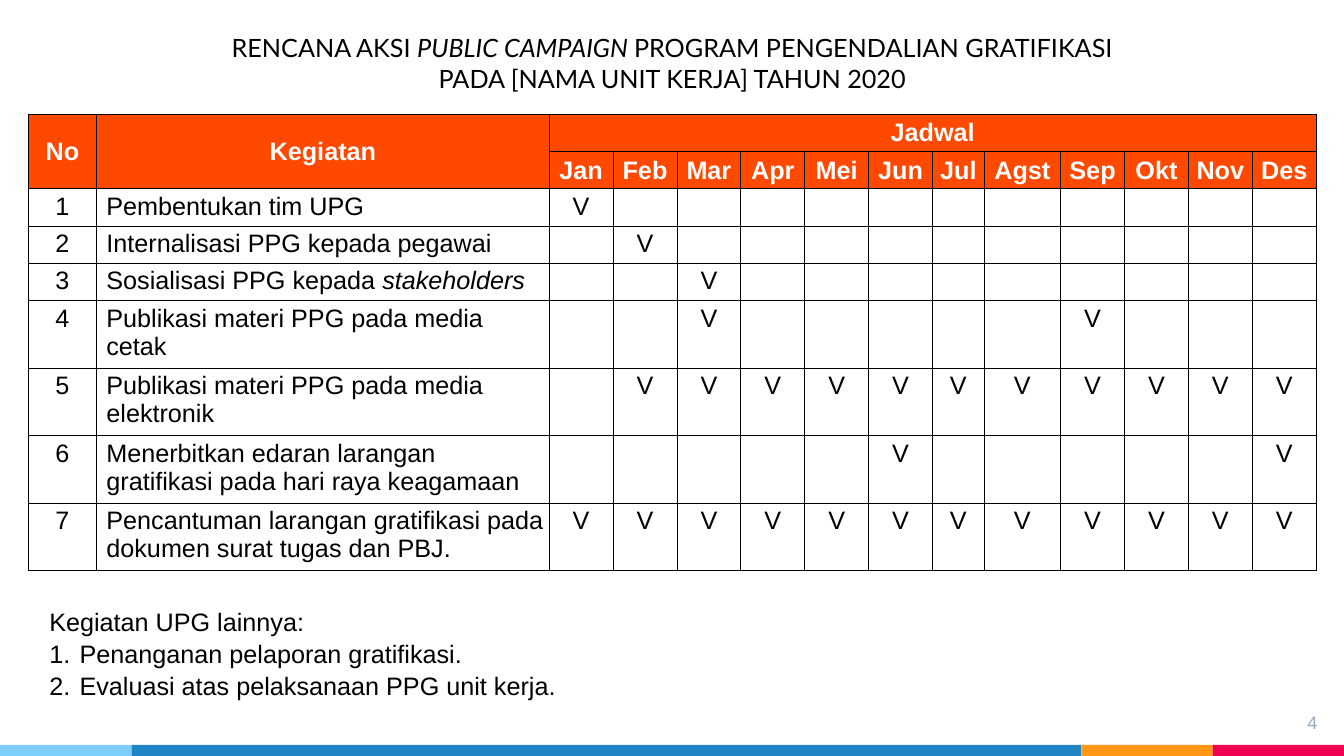
from dataclasses import dataclass

from lxml import etree
from pptx import Presentation
from pptx.dml.color import RGBColor
from pptx.enum.shapes import MSO_SHAPE
from pptx.enum.text import MSO_ANCHOR, MSO_AUTO_SIZE, PP_ALIGN
from pptx.oxml.ns import qn
from pptx.util import Pt

RECTANGLE = MSO_SHAPE.RECTANGLE
LEFT, CENTER, RIGHT = PP_ALIGN.LEFT, PP_ALIGN.CENTER, PP_ALIGN.RIGHT
TOP, MIDDLE = MSO_ANCHOR.TOP, MSO_ANCHOR.MIDDLE
GROW = MSO_AUTO_SIZE.SHAPE_TO_FIT_TEXT

BLACK = RGBColor(0x00, 0x00, 0x00)
WHITE = RGBColor(0xFF, 0xFF, 0xFF)
ORANGE = RGBColor(0xFF, 0x48, 0x00)
GRAY = RGBColor(0x97, 0xAB, 0xBC)
SKY = RGBColor(0x7E, 0xCE, 0xFD)
BLUE = RGBColor(0x21, 0x85, 0xC5)
AMBER = RGBColor(0xFF, 0x97, 0x15)
CRIMSON = RGBColor(0xF2, 0x02, 0x53)

TITLE_FONT = {"name": "Lato", "size": Pt(18)}
BODY_FONT = {"name": "Arial", "size": Pt(18)}
HEADER_FONT = BODY_FONT | {"bold": True}
PAGE_FONT = {"name": "Arial", "size": Pt(13)}
NO_STYLE = "{2D5ABB26-0587-4C30-8999-92F81FD0307C}"
MONTHS = ["Jan", "Feb", "Mar", "Apr", "Mei", "Jun",
          "Jul", "Agst", "Sep", "Okt", "Nov", "Des"]
MONTH_WIDTHS = {"Jul": 36.9, "Agst": 54.6}


@dataclass
class Activity:
    text: str
    months: list[str]
    height: float = 46
    italic_end: str = ""


@dataclass
class Bar:
    left: float
    right: float
    color: RGBColor


ACTIVITIES = [
    Activity("Pembentukan tim UPG", ["Jan"], 25.7),
    Activity("Internalisasi PPG kepada pegawai", ["Feb"], 25.7),
    Activity("Sosialisasi PPG kepada ", ["Mar"], 25.7, "stakeholders"),
    Activity("Publikasi materi PPG pada media cetak", ["Mar", "Sep"]),
    Activity("Publikasi materi PPG pada media elektronik", MONTHS[1:]),
    Activity("Menerbitkan edaran larangan gratifikasi pada hari raya keagamaan",
             ["Jun", "Des"]),
    Activity("Pencantuman larangan gratifikasi pada dokumen surat tugas dan PBJ.",
             MONTHS),
]
BARS = [Bar(0, 94, SKY), Bar(94, 772.4, BLUE),
        Bar(772.4, 866.2, AMBER), Bar(866.2, 960, CRIMSON)]
OTHER_ACTIVITIES = ["Kegiatan UPG lainnya:", "Penanganan pelaporan gratifikasi.",
                    "Evaluasi atas pelaksanaan PPG unit kerja."]


def apply(target: object, values: dict) -> None:
    for name, value in values.items():
        setattr(target, name, value)


def add_text(paragraph, text: str, font: dict, color: RGBColor = BLACK,
             italic: bool = False) -> None:
    run = paragraph.add_run()
    run.text = text
    apply(run.font, font | {"italic": italic})
    run.font.color.rgb = color


def set_borders(cell, widths: dict[str, float]) -> None:
    """Draw the given sides in black and leave the others without a line."""
    properties = cell._tc.get_or_add_tcPr()
    for side in ("lnL", "lnR", "lnT", "lnB"):
        width = widths.get(side, 0)
        line = etree.SubElement(properties, qn(f"a:{side}"), w=str(int(Pt(width))))
        if width:
            fill = etree.SubElement(line, qn("a:solidFill"))
            etree.SubElement(fill, qn("a:srgbClr"), val=str(BLACK))
        else:
            etree.SubElement(line, qn("a:noFill"))


def format_cell(cell, align: PP_ALIGN, anchor: MSO_ANCHOR = TOP) -> None:
    inset = Pt(2.5)
    apply(cell, {"margin_left": inset, "margin_right": inset, "margin_top": inset,
                 "margin_bottom": inset, "vertical_anchor": anchor})
    apply(cell.text_frame.paragraphs[0],
          {"alignment": align, "space_before": Pt(2), "space_after": Pt(2)})


def fill_title(table) -> None:
    cell = table.cell(0, 0)
    cell.merge(table.cell(0, 13))
    apply(cell, {"margin_left": Pt(9.4), "margin_right": Pt(9.4),
                 "margin_top": Pt(5), "margin_bottom": Pt(5)})
    title = cell.text_frame.paragraphs[0]
    title.alignment = CENTER
    add_text(title, "RENCANA AKSI ", TITLE_FONT)
    add_text(title, "PUBLIC CAMPAIGN ", TITLE_FONT, italic=True)
    add_text(title, "PROGRAM PENGENDALIAN GRATIFIKASI", TITLE_FONT)
    title.add_line_break()
    add_text(title, "PADA [NAMA UNIT KERJA] TAHUN 2020", TITLE_FONT)


def fill_header(table) -> None:
    table.cell(1, 0).merge(table.cell(2, 0))
    table.cell(1, 1).merge(table.cell(2, 1))
    table.cell(1, 2).merge(table.cell(1, 13))
    headings = {(1, 0): "No", (1, 1): "Kegiatan", (1, 2): "Jadwal"}
    headings |= {(2, column): month for column, month in enumerate(MONTHS, 2)}
    for (row, column), heading in headings.items():
        cell = table.cell(row, column)
        format_cell(cell, CENTER, MIDDLE)
        add_text(cell.text_frame.paragraphs[0], heading, HEADER_FONT, WHITE)


def fill_activity(table, number: int, activity: Activity) -> None:
    marks = ["V" if month in activity.months else "" for month in MONTHS]
    for column, text in enumerate([str(number), activity.text, *marks]):
        cell = table.cell(number + 2, column)
        format_cell(cell, LEFT if column == 1 else CENTER)
        paragraph = cell.text_frame.paragraphs[0]
        if text:
            add_text(paragraph, text, BODY_FONT)
        else:
            apply(paragraph.font, BODY_FONT)
        if column == 1:
            paragraph._p.get_or_add_pPr().set("marL", str(int(Pt(4.5))))
            if activity.italic_end:
                add_text(paragraph, activity.italic_end, BODY_FONT, italic=True)


def add_plan(slide) -> None:
    heights = [63.2, 26.1, 26.1] + [activity.height for activity in ACTIVITIES]
    widths = [48.8, 323.3] + [MONTH_WIDTHS.get(month, 45.65) for month in MONTHS]
    frame = slide.shapes.add_table(len(heights), len(widths), Pt(20.2), Pt(18.5),
                                   Pt(sum(widths)), Pt(sum(heights)))
    table = frame.table
    apply(table, {"first_row": False, "horz_banding": False})
    table._tbl.tblPr.find(qn("a:tableStyleId")).text = NO_STYLE
    for row, height in zip(table.rows, heights):
        row.height = Pt(height)
    for column, width in zip(table.columns, widths):
        column.width = Pt(width)

    # Borders and fills
    grid = dict.fromkeys(("lnL", "lnR", "lnT", "lnB"), 0.75)
    borders = {0: {"lnB": 1}, 1: grid | {"lnT": 1}}
    for index, row in enumerate(table.rows):
        for cell in row.cells:
            set_borders(cell, borders.get(index, grid))
            if index in (1, 2):
                cell.fill.solid()
                cell.fill.fore_color.rgb = ORANGE
            else:
                cell.fill.background()

    # Contents
    fill_title(table)
    fill_header(table)
    for number, activity in enumerate(ACTIVITIES, 1):
        fill_activity(table, number, activity)


def fill_other_activities(body) -> None:
    apply(body, {"left": Pt(28), "top": Pt(428.4), "width": Pt(903.6), "height": Pt(72.7)})
    frame = body.text_frame
    apply(frame, {"word_wrap": True, "auto_size": GROW, "vertical_anchor": TOP})
    for index, text in enumerate(OTHER_ACTIVITIES):
        paragraph = frame.add_paragraph() if index else frame.paragraphs[0]
        apply(paragraph, {"alignment": LEFT, "line_spacing": 1.05,
                          "space_before": Pt(0), "space_after": Pt(0)})
        add_text(paragraph, text, BODY_FONT)
        indent = int(Pt(21.6)) if index else 0
        properties = paragraph._p.get_or_add_pPr()
        properties.set("marL", str(indent))
        properties.set("indent", str(-indent))
        if index:
            etree.SubElement(properties, qn("a:buFont"), typeface="+mj-lt")
            etree.SubElement(properties, qn("a:buAutoNum"), type="arabicPeriod")
        else:
            etree.SubElement(properties, qn("a:buNone"))


def add_footer(slide) -> None:
    for bar in BARS:
        strip = slide.shapes.add_shape(RECTANGLE, Pt(bar.left), Pt(532),
                                       Pt(bar.right - bar.left), Pt(8))
        strip.shadow.inherit = False
        strip.fill.solid()
        strip.fill.fore_color.rgb = bar.color
        strip.line.fill.background()
    page_number = slide.shapes.add_textbox(Pt(890.6), Pt(501), Pt(57.6), Pt(33))
    frame = page_number.text_frame
    apply(frame, {"word_wrap": True, "margin_top": Pt(7.2), "margin_bottom": Pt(7.2)})
    frame.paragraphs[0].alignment = RIGHT
    add_text(frame.paragraphs[0], "4", PAGE_FONT, GRAY)


def main() -> None:
    deck = Presentation()
    apply(deck, {"slide_width": Pt(960), "slide_height": Pt(540)})
    slide = deck.slides.add_slide(deck.slide_layouts[1])
    # The heading is the first row of the table
    unused_title = slide.shapes.title.element
    unused_title.getparent().remove(unused_title)
    add_footer(slide)
    add_plan(slide)
    fill_other_activities(slide.placeholders[1])
    deck.save("out.pptx")


if __name__ == "__main__":
    main()
